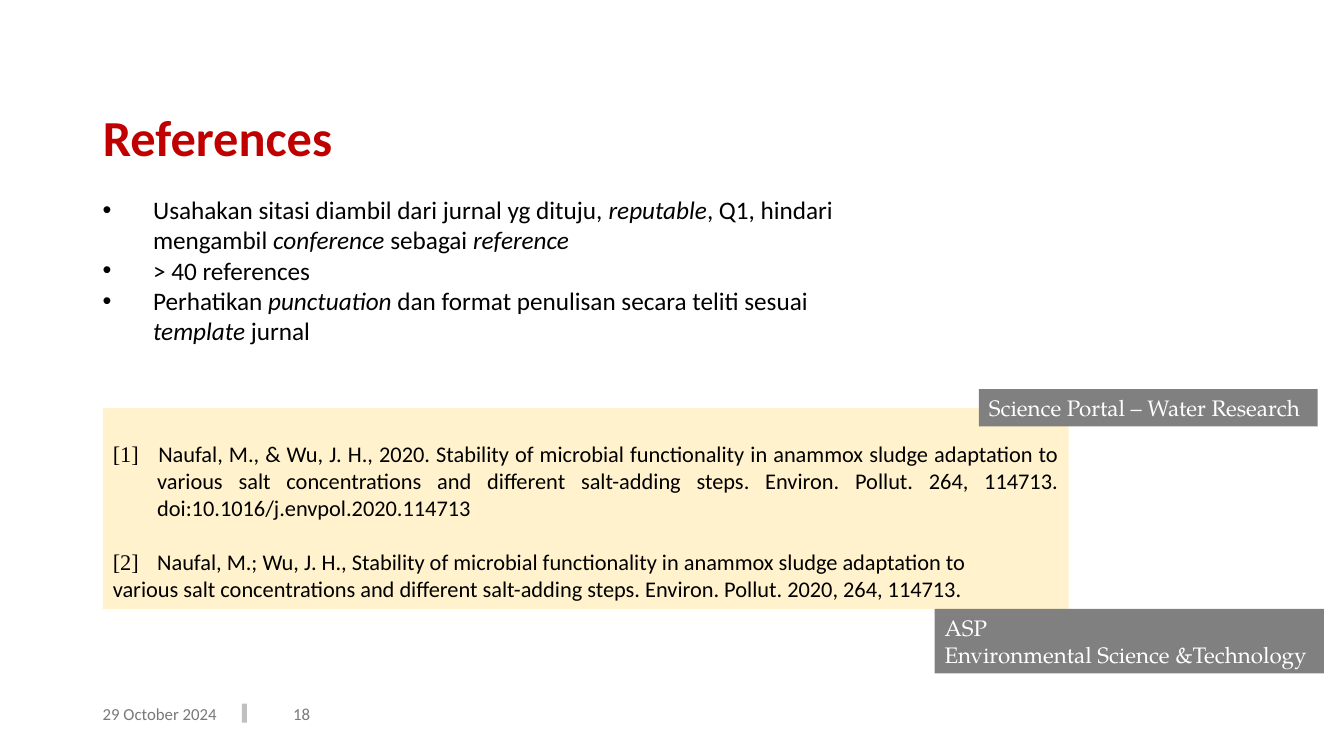
import pptx
import pptx.util
import pptx.dml.color
import pptx.enum.shapes
import pptx.enum.text
import pptx.oxml.ns
from lxml import etree

Inches, Pt = pptx.util.Inches, pptx.util.Pt
ANCHOR, ALIGN = pptx.enum.text.MSO_ANCHOR, pptx.enum.text.PP_ALIGN

COLORS = {"title": "C00000", "text": "000000", "footer": "797979", "bar": "BFBFBF",
          "panel": "FFF2CC", "label": "808080", "label_text": "FFFFFF"}

BODY = {"name": "Calibri", "size": Pt(18)}
CITED = {"name": "Calibri", "size": Pt(16)}
NUMBER = {"name": "Times New Roman", "size": Pt(16)}
LABEL = {"name": "TeX Gyre Pagella", "size": Pt(16)}
FOOTER = {"name": "Calibri", "size": Pt(12)}
TITLE = {"name": "Calibri", "size": Pt(36), "bold": True}
ITALIC = {**BODY, "italic": True}

BULLETS = [
    [("Usahakan sitasi diambil dari jurnal yg dituju, ", BODY), ("reputable", ITALIC),
     (", Q1, hindari mengambil ", BODY), ("conference ", ITALIC),
     ("sebagai ", BODY), ("reference", ITALIC)],
    [("> 40 references", BODY)],
    [("Perhatikan ", BODY), ("punctuation", ITALIC),
     (" dan format penulisan secara teliti sesuai\v", BODY),
     ("template ", ITALIC), ("jurnal", BODY)],
]
CITATIONS = [
    [("[1] \t", NUMBER),
     ("Naufal, M., & Wu, J. H., 2020. Stability of microbial functionality in anammox sludge "
      "adaptation to various salt concentrations and different salt-adding steps. "
      "Environ. Pollut. 264, 114713. doi:10.1016/j.envpol.2020.114713", CITED)],
    [("[2]  \t", NUMBER),
     ("Naufal, M.; Wu, J. H., Stability of microbial functionality in anammox sludge "
      "adaptation to", CITED)],
    [("various salt concentrations and different salt-adding steps. "
      "Environ. Pollut. 2020, 264, 114713.", CITED)],
]
LABELS = [
    ((9.71, 3.86, 3.36, 0.37), ["Science Portal – Water Research"]),
    ((9.27, 6.04, 3.86, 0.64), ["ASP", "Environmental Science &Technology"]),
]
FOOTERS = [((0.92, 6.88, 1.5, 0.4), "29 October 2024"), ((2.81, 6.88, 1.05, 0.4), "18")]
LINE = Pt(19.5)


def color(name):
    return pptx.dml.color.RGBColor.from_string(COLORS[name])


def rectangle(slide, box, fill):
    sp = slide.shapes.add_shape(pptx.enum.shapes.MSO_SHAPE.RECTANGLE, *map(Inches, box))
    sp.shadow.inherit = False
    sp.fill.solid()
    sp.fill.fore_color.rgb = color(fill)
    sp.line.fill.background()
    return sp


def write(sp, paragraphs, color_name, anchor=ANCHOR.TOP, align=ALIGN.LEFT):
    tf = sp.text_frame
    tf.word_wrap = True
    tf.vertical_anchor = anchor
    for i, runs in enumerate(paragraphs):
        p = tf.paragraphs[0] if i == 0 else tf.add_paragraph()
        p.alignment = align
        for text, style in runs:
            head, *rest = text.split("\v")
            for j, piece in enumerate([head, *rest]):
                if j:
                    p.add_line_break()
                if piece:
                    r = p.add_run()
                    r.text = piece
                    r.font.color.rgb = color(color_name)
                    for key, value in style.items():
                        setattr(r.font, key, value)
    return tf


def hang(p, indent):
    pPr = p._p.get_or_add_pPr()
    pPr.set("marL", str(Inches(indent)))
    pPr.set("indent", str(-Inches(indent)))
    return pPr


def main():
    qn = pptx.oxml.ns.qn
    prs = pptx.Presentation()
    prs.slide_width, prs.slide_height = Inches(13.33), Inches(7.5)
    slide = prs.slides.add_slide(prs.slide_layouts[5])

    title = slide.shapes.title
    title.left, title.top, title.width, title.height = map(Inches, (0.92, 0.96, 7.65, 0.86))
    tf = write(title, [[("References", TITLE)]], "title", ANCHOR.MIDDLE)
    tf.paragraphs[0].line_spacing = 0.9

    rectangle(slide, (2.4, 6.98, 0.05, 0.19), "bar")
    for box, text in FOOTERS:
        sp = slide.shapes.add_textbox(*map(Inches, box))
        write(sp, [[(text, FOOTER)]], "footer", ANCHOR.MIDDLE)

    panel = rectangle(slide, (1.02, 4.05, 9.58, 1.99), "panel")
    tf = write(panel, CITATIONS, "text", align=ALIGN.JUSTIFY)
    tf.margin_top = Inches(0.05) + LINE
    for p in tf.paragraphs:
        tabs = etree.SubElement(hang(p, 0.44), qn("a:tabLst"))
        etree.SubElement(tabs, qn("a:tab"), pos=str(Inches(0.44)), algn="l")
    tf.paragraphs[1].space_before = LINE

    for box, lines in LABELS:
        sp = rectangle(slide, box, "label")
        write(sp, [[(line, LABEL)] for line in lines], "label_text")

    sp = slide.shapes.add_textbox(*map(Inches, (0.92, 1.88, 8.55, 1.62)))
    for p in write(sp, BULLETS, "text").paragraphs:
        pPr = hang(p, 0.5)
        etree.SubElement(pPr, qn("a:buFont"), typeface="Arial")
        etree.SubElement(pPr, qn("a:buChar"), char="•")

    prs.save("out.pptx")


if __name__ == "__main__":
    main()
